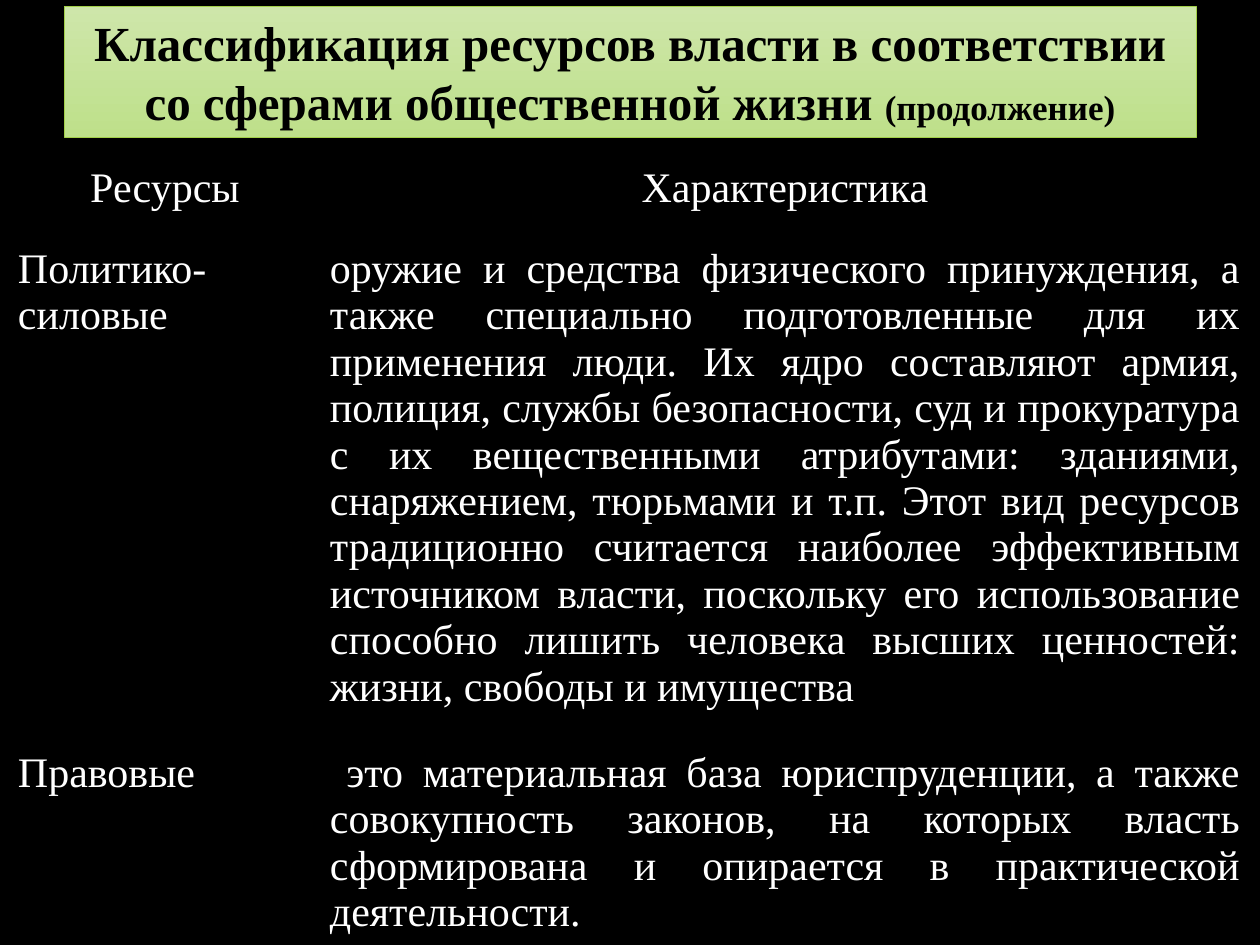
from lxml.etree import SubElement
from pptx import Presentation
from pptx.dml.color import RGBColor
from pptx.enum.text import MSO_ANCHOR, MSO_AUTO_SIZE, PP_ALIGN
from pptx.oxml.ns import qn
from pptx.util import Emu, Pt

TITLE = [
    ("Классификация ресурсов власти в соответствии со сферами общественной жизни ", 28),
    ("(продолжение)", 20),
]
SERIF, SANS = "Times New Roman", "Calibri"
ROWS = [
    ([("Ресурсы", 24, SERIF)], [("Характеристика", 24, SERIF)]),
    (
        [("Политико-силовые", 24, SERIF)],
        [("оружие и средства физического принуждения, а также специально подготовленные "
          "для их применения люди. Их ядро составляют армия, полиция, службы безопасности, "
          "суд и прокуратура с их вещественными атрибутами: зданиями, снаряжением, тюрьмами "
          "и т.п. Этот вид ресурсов традиционно считается наиболее эффективным источником "
          "власти, поскольку его использование способно лишить человека высших ценностей: "
          "жизни, свободы и имущества", 24, SERIF)],
    ),
    (
        [("Правовые ", 24, SERIF)],
        [(" ", 18, SANS),
         ("это материальная база юриспруденции, а также совокупность законов, на которых "
          "власть сформирована и опирается в практической деятельности. ", 24, SERIF)],
    ),
]
COLUMN_WIDTHS = [312, 928]
ROW_HEIGHTS = [81, 504, 201]

BLACK = RGBColor(0x00, 0x00, 0x00)
WHITE = RGBColor(0xFF, 0xFF, 0xFF)
GREEN_TOP = RGBColor(0xCE, 0xE6, 0xAA)
GREEN_BOTTOM = RGBColor(0xBE, 0xE0, 0x8A)
GREEN_LINE = RGBColor(0xA2, 0xCF, 0x49)


def px(value):
    return Emu(round(value * 914400 / 126))


def add_run(paragraph, text, size, font_name, color, bold=False):
    run = paragraph.add_run()
    run.text = text
    font = run.font
    font.size, font.name, font.bold = Pt(size), font_name, bold
    font.color.rgb = color


def add_borders(cell, color):
    properties = cell._tc.get_or_add_tcPr()
    for side in ("a:lnL", "a:lnR", "a:lnT", "a:lnB"):
        line = SubElement(properties, qn(side), w=str(Pt(1)))
        fill = SubElement(line, qn("a:solidFill"))
        SubElement(fill, qn("a:srgbClr"), val=str(color))


def format_title(title):
    title.left, title.top, title.width, title.height = px(64), px(6), px(1132), px(131)
    title.fill.gradient()
    title.fill.gradient_angle = 270
    for stop, color in zip(title.fill.gradient_stops, (GREEN_TOP, GREEN_BOTTOM)):
        stop.color.rgb = color
    title.line.color.rgb = GREEN_LINE
    title.line.width = Pt(0.5)
    frame = title.text_frame
    frame.word_wrap = True
    frame.auto_size = MSO_AUTO_SIZE.NONE
    frame.vertical_anchor = MSO_ANCHOR.MIDDLE
    paragraph = frame.paragraphs[0]
    paragraph.alignment = PP_ALIGN.CENTER
    for text, size in TITLE:
        add_run(paragraph, text, size, SERIF, BLACK, True)


def add_resource_table(slide):
    table = slide.shapes.add_table(
        len(ROWS), len(COLUMN_WIDTHS), px(9), px(165),
        px(sum(COLUMN_WIDTHS)), px(sum(ROW_HEIGHTS))).table
    table.first_row = table.horz_banding = False
    for column, width in zip(table.columns, COLUMN_WIDTHS):
        column.width = px(width)
    for row_index, (row, height) in enumerate(zip(table.rows, ROW_HEIGHTS)):
        row.height = px(height)
        for cell, runs in zip(row.cells, ROWS[row_index]):
            add_borders(cell, BLACK)
            cell.fill.background()
            cell.margin_left = cell.margin_right = px(9)
            cell.margin_top = cell.margin_bottom = 0
            paragraph = cell.text_frame.paragraphs[0]
            paragraph.alignment = PP_ALIGN.JUSTIFY if row_index else PP_ALIGN.CENTER
            for text, size, font_name in runs:
                add_run(paragraph, text, size, font_name, WHITE)


def main():
    presentation = Presentation()
    presentation.slide_width, presentation.slide_height = px(1260), px(945)
    slide = presentation.slides.add_slide(presentation.slide_layouts[5])
    background = slide.background.fill
    background.solid()
    background.fore_color.rgb = BLACK
    format_title(slide.shapes.title)
    add_resource_table(slide)
    presentation.save("out.pptx")


if __name__ == "__main__":
    main()
